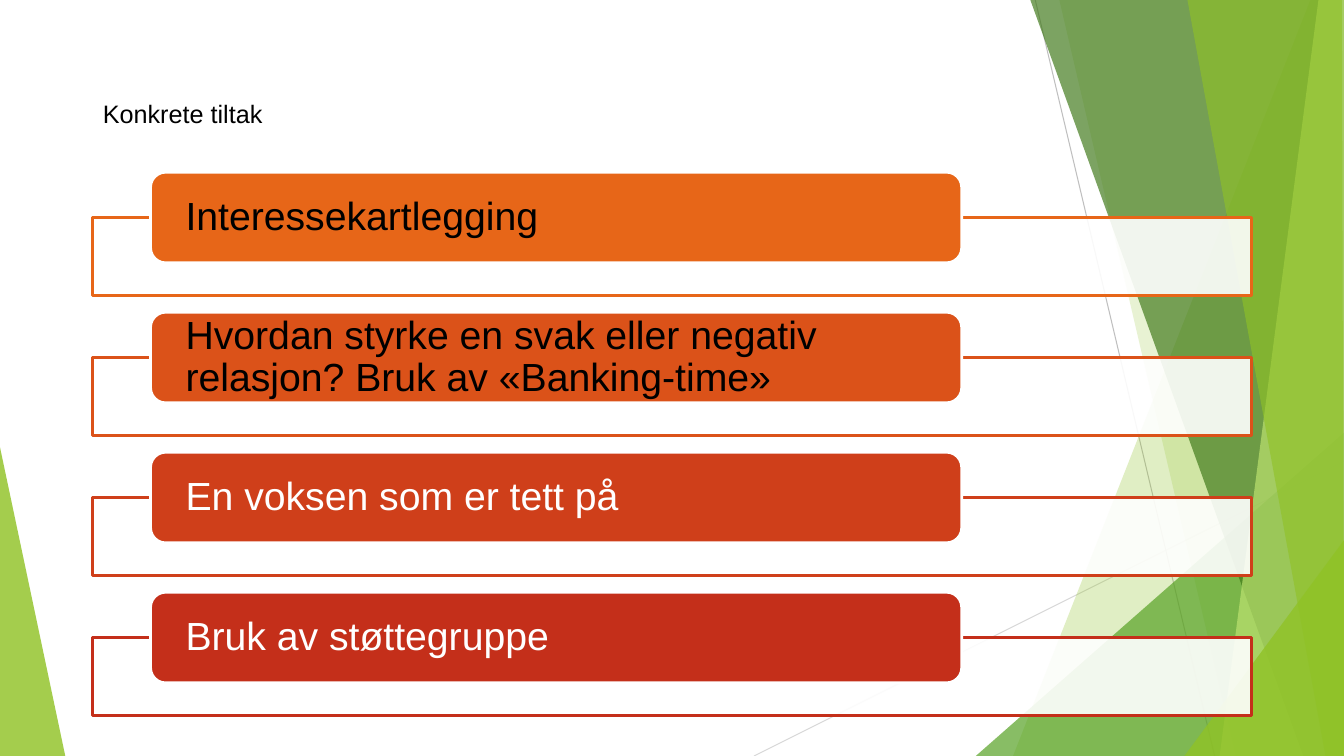
from lxml import etree
from pptx import Presentation
from pptx.dml.color import RGBColor
from pptx.enum import shapes, text
from pptx.oxml import ns
from pptx.util import Pt

BLACK = RGBColor(0x00, 0x00, 0x00)
WHITE = RGBColor(0xFF, 0xFF, 0xFF)
SILVER = RGBColor(0xD8, 0xD8, 0xD8)
GREY = RGBColor(0xBF, 0xBF, 0xBF)
LIME = RGBColor(0x90, 0xC2, 0x26)
PALE_LIME = RGBColor(0xBF, 0xE4, 0x71)
GREEN = RGBColor(0x54, 0xA0, 0x21)
DARK_GREEN = RGBColor(0x3F, 0x78, 0x18)
ORANGE = RGBColor(0xE7, 0x66, 0x18)
DEEP_ORANGE = RGBColor(0xDB, 0x52, 0x19)
RUST = RGBColor(0xCF, 0x3F, 0x1A)
RED = RGBColor(0xC4, 0x2F, 0x1A)

FONT = "Arial"
WIDTH, HEIGHT = 960, 540
MARGIN, CONTENT_WIDTH = 66.25, 828
FIRST_HEADER_TOP, ROW_PITCH = 123, 100

# Corner points, colour and opacity in percent
LEFT_FACET = ([(-0.7, 316), (46.8, 540.7), (-0.7, 540)], LIME, 82)
RIGHT_FACETS = [
    ([(936, 0), (723.6, HEIGHT), (961, HEIGHT), (960.5, 0)], LIME, 27),
    ([(756.7, 0), (882.7, HEIGHT), (WIDTH, HEIGHT), (960.5, 0)], LIME, 20),
    ([(697, HEIGHT), (WIDTH, 309), (960.5, HEIGHT)], GREEN, 69),
    ([(736, 0), (931, HEIGHT), (961, HEIGHT), (961, 0)], DARK_GREEN, 68),
    ([(941.8, 0), (871.2, HEIGHT), (961, HEIGHT), (960.5, 0)], PALE_LIME, 68),
    ([(848.2, 0), (946.8, HEIGHT), (WIDTH, HEIGHT), (958.5, 0)], LIME, 62),
    ([(846, HEIGHT), (960.5, 385.2), (961, HEIGHT)], LIME, 80),
]
HAIRLINES = [
    ((538.6, HEIGHT), (961, 329), SILVER),
    ((739.5, 0), (867.6, HEIGHT), GREY),
]
MEASURES = [
    ("Interessekartlegging", ORANGE, BLACK),
    ("Hvordan styrke en svak eller negativ relasjon? Bruk av «Banking-time»",
     DEEP_ORANGE, BLACK),
    ("En voksen som er tett på", RUST, WHITE),
    ("Bruk av støttegruppe", RED, WHITE),
]


def fill_shape(shape, color, opacity=100):
    shape.shadow.inherit = False
    shape.fill.solid()
    shape.fill.fore_color.rgb = color
    if opacity < 100:
        color_element = shape._element.spPr.find(ns.qn("a:solidFill"))[0]
        alpha = etree.SubElement(color_element, ns.qn("a:alpha"))
        alpha.set("val", str(opacity * 1000))


def outline_shape(shape, color):
    shape.line.color.rgb = color
    shape.line.width = Pt(2)


def add_facet(slide, corners, color, opacity):
    points = [(Pt(x), Pt(y)) for x, y in corners]
    builder = slide.shapes.build_freeform(*points[0])
    builder.add_line_segments(points[1:])
    facet = builder.convert_to_shape()
    fill_shape(facet, color, opacity)
    facet.line.fill.background()


def add_hairline(slide, start, end, color):
    line = slide.shapes.add_connector(
        shapes.MSO_CONNECTOR.STRAIGHT, *(Pt(value) for value in start + end))
    line.line.color.rgb = color
    line.line.width = Pt(0.75)
    etree.SubElement(line._element.spPr, ns.qn("a:effectLst"))


def add_box(slide, kind, left, top, width, height):
    return slide.shapes.add_shape(
        kind, Pt(left), Pt(top), Pt(width), Pt(height))


def format_paragraph(paragraph, size, color):
    paragraph.alignment = text.PP_ALIGN.LEFT
    paragraph.font.name = FONT
    paragraph.font.size = Pt(size)
    paragraph.font.color.rgb = color


def set_title(slide, wording):
    title = slide.shapes.title
    title.left, title.top = Pt(MARGIN), Pt(28.75)
    title.width, title.height = Pt(CONTENT_WIDTH), Pt(104.4)
    title.text_frame.text = wording
    title.text_frame.vertical_anchor = text.MSO_ANCHOR.MIDDLE
    format_paragraph(title.text_frame.paragraphs[0], 18, BLACK)


def add_measure(slide, top, wording, color, text_color):
    """Add an outlined frame with a filled header overlapping its top edge."""
    frame = add_box(slide, shapes.MSO_SHAPE.RECTANGLE,
                    MARGIN, top + 32.4, CONTENT_WIDTH, 55.5)
    fill_shape(frame, WHITE, 90)
    outline_shape(frame, color)

    header = add_box(slide, shapes.MSO_SHAPE.ROUNDED_RECTANGLE,
                     107.5, top, 579.5, 64.8)
    fill_shape(header, color)
    outline_shape(header, WHITE)

    text_frame = header.text_frame
    text_frame.word_wrap = True
    text_frame.vertical_anchor = text.MSO_ANCHOR.MIDDLE
    text_frame.margin_left = text_frame.margin_right = Pt(21.9)
    text_frame.margin_top = text_frame.margin_bottom = 0
    text_frame.text = wording
    paragraph = text_frame.paragraphs[0]
    format_paragraph(paragraph, 28, text_color)
    paragraph.line_spacing = 0.9


def main():
    presentation = Presentation()
    presentation.slide_width, presentation.slide_height = Pt(WIDTH), Pt(HEIGHT)
    slide = presentation.slides.add_slide(presentation.slide_layouts[5])

    add_facet(slide, *LEFT_FACET)
    for hairline in HAIRLINES:
        add_hairline(slide, *hairline)
    for facet in RIGHT_FACETS:
        add_facet(slide, *facet)

    set_title(slide, "Konkrete tiltak")
    for row, measure in enumerate(MEASURES):
        add_measure(slide, FIRST_HEADER_TOP + row * ROW_PITCH, *measure)

    presentation.save("out.pptx")


if __name__ == "__main__":
    main()
